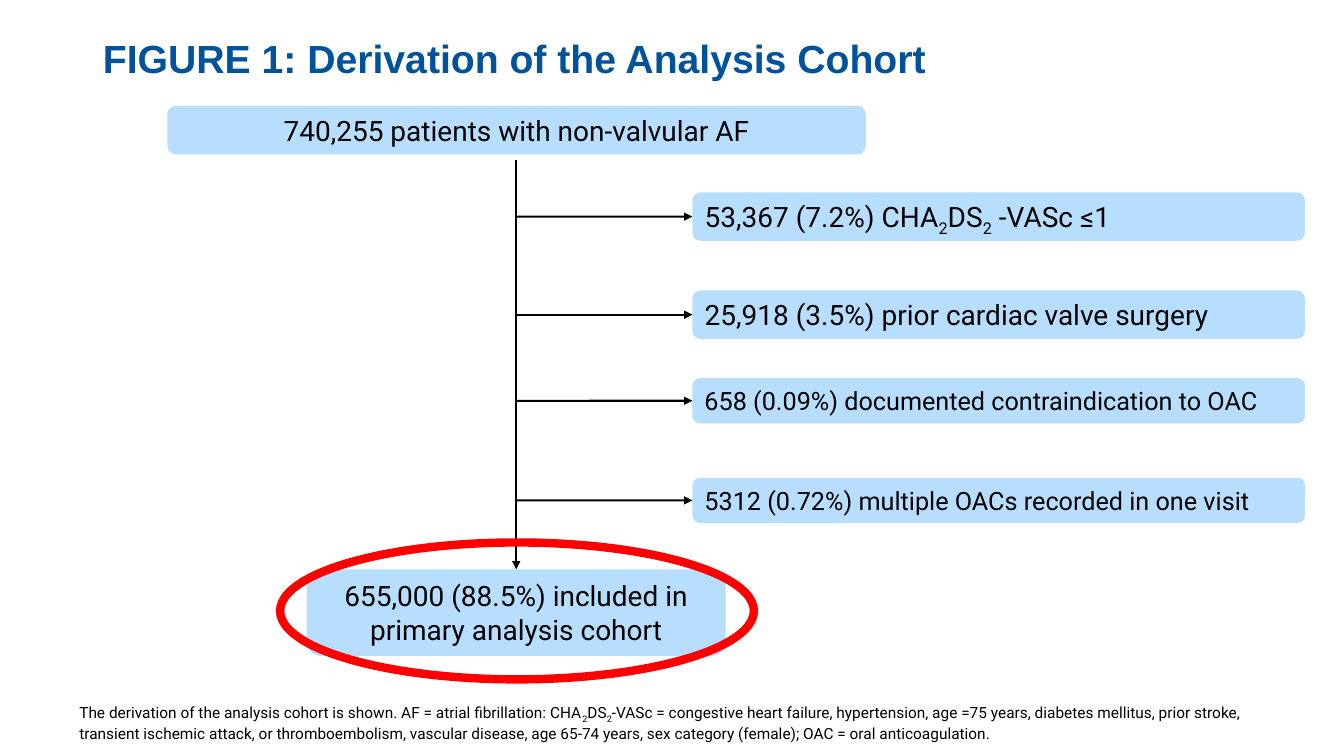
from dataclasses import dataclass

import pptx
import pptx.dml.color
import pptx.enum.shapes
import pptx.enum.text
import pptx.oxml.ns
import pptx.util
from lxml import etree

COLORS = {"box": "B8DEFF", "text": "000000", "title": "00539B", "ring": "FF0000"}
ALIGN = pptx.enum.text.PP_ALIGN
ANCHOR = pptx.enum.text.MSO_ANCHOR
SHAPE = pptx.enum.shapes.MSO_SHAPE
TOP_SIDE, LEFT_SIDE = 0, 1


@dataclass
class Step:
    """A box of the flow chart; lengths in cm, size in points."""
    text: str
    top: float
    height: float
    left: float
    width: float
    size: int = 20
    align: ALIGN = ALIGN.CENTER


@dataclass
class Exclusion(Step):
    """A box of patients removed, right of the main flow."""
    left: float = 17.45
    width: float = 15.44
    align: ALIGN = ALIGN.LEFT


START = Step("740,255 patients with non-valvular AF",
             top=2.67, height=1.22, left=4.22, width=17.6)
COHORT = Step("655,000 (88.5%) included in primary analysis cohort",
              top=14.35, height=2.18, left=7.73, width=10.56)
EXCLUSIONS = [
    Exclusion("53,367 (7.2%) CHA_2_DS_2_ -VASc ≤1", top=4.85, height=1.22),
    Exclusion("25,918 (3.5%) prior cardiac valve surgery", top=7.32, height=1.22),
    Exclusion("658 (0.09%) documented contraindication to OAC",
              top=9.53, height=1.14, size=18),
    Exclusion("5312 (0.72%) multiple OACs recorded in one visit",
              top=12.04, height=1.14, size=18),
]
FLOW_X = COHORT.left + COHORT.width / 2
FLOW_TOP = 4.04
FOOTNOTE = (
    "The derivation of the analysis cohort is shown. AF = atrial fibrillation: "
    "CHA_2_DS_2_-VASc = congestive heart failure, hypertension, age =75 years, "
    "diabetes mellitus, prior stroke, transient ischemic attack, or "
    "thromboembolism, vascular disease, age 65-74 years, sex category (female); "
    "OAC = oral anticoagulation."
)


def rgb(name: str) -> pptx.dml.color.RGBColor:
    return pptx.dml.color.RGBColor.from_string(COLORS[name])


def cm(*lengths: float) -> list[pptx.util.Length]:
    return [pptx.util.Cm(length) for length in lengths]


def write(frame, text: str, *, size: int, font: str = "Roboto",
          color: str = "text", bold: bool = False, align: ALIGN = ALIGN.LEFT,
          anchor: ANCHOR = ANCHOR.TOP, spacing: float = 1.0) -> None:
    """Fill a text frame; parts between underscores become subscripts."""
    frame.word_wrap = True
    frame.auto_size = pptx.enum.text.MSO_AUTO_SIZE.NONE
    frame.vertical_anchor = anchor
    paragraph = frame.paragraphs[0]
    paragraph.alignment = align
    paragraph.line_spacing = spacing
    for index, part in enumerate(text.split("_")):
        run = paragraph.add_run()
        run.text = part
        run.font.name = font
        run.font.size = pptx.util.Pt(size)
        run.font.bold = bold
        run.font.color.rgb = rgb(color)
        if index % 2:
            run.font._element.set("baseline", "-25000")


def add_step(slide, step: Step):
    box = slide.shapes.add_shape(
        SHAPE.ROUNDED_RECTANGLE, *cm(step.left, step.top, step.width, step.height))
    box.shadow.inherit = False
    box.fill.solid()
    box.fill.fore_color.rgb = rgb("box")
    box.line.fill.background()
    write(box.text_frame, step.text, size=step.size, align=step.align)
    return box


def add_arrow(slide, start_y: float, target, side: int) -> None:
    """Draw an arrow from the main flow line to one side of a box."""
    arrow = slide.shapes.add_connector(
        pptx.enum.shapes.MSO_CONNECTOR.STRAIGHT,
        *cm(FLOW_X, start_y, FLOW_X, start_y))
    arrow.end_connect(target, side)
    arrow.line.width = pptx.util.Pt(1.5)
    arrow.line.color.rgb = rgb("text")
    qn = pptx.oxml.ns.qn
    outline = arrow.line._get_or_add_ln()
    etree.SubElement(outline, qn("a:tailEnd"), type="triangle")
    etree.SubElement(arrow._element.spPr, qn("a:effectLst"))


def main() -> None:
    deck = pptx.Presentation()
    deck.slide_width, deck.slide_height = cm(33.87, 19.05)
    slide = deck.slides.add_slide(deck.slide_layouts[5])

    # Title
    title = slide.shapes.title
    title.left, title.top, title.width, title.height = cm(2.34, 0, 29.21, 3.07)
    write(title.text_frame, "FIGURE 1: Derivation of the Analysis Cohort",
          size=28, font="Arial", color="title", bold=True,
          anchor=ANCHOR.MIDDLE, spacing=0.9)

    # Flow from all patients to the cohort
    add_step(slide, START)
    cohort = add_step(slide, COHORT)
    add_arrow(slide, FLOW_TOP, cohort, TOP_SIDE)

    # Exclusions branching off
    for exclusion in EXCLUSIONS:
        removed = add_step(slide, exclusion)
        add_arrow(slide, exclusion.top + exclusion.height / 2, removed, LEFT_SIDE)

    # Ring around the cohort
    ring = slide.shapes.add_shape(SHAPE.OVAL, *cm(7.06, 13.67, 11.94, 3.45))
    ring.shadow.inherit = False
    ring.fill.background()
    ring.line.color.rgb = rgb("ring")
    ring.line.width = pptx.util.Pt(6)

    # Footnote
    footnote = slide.shapes.add_textbox(*cm(1.75, 17.6, 31.17, 1.19))
    write(footnote.text_frame, FOOTNOTE, size=11)

    deck.save("out.pptx")


if __name__ == "__main__":
    main()
